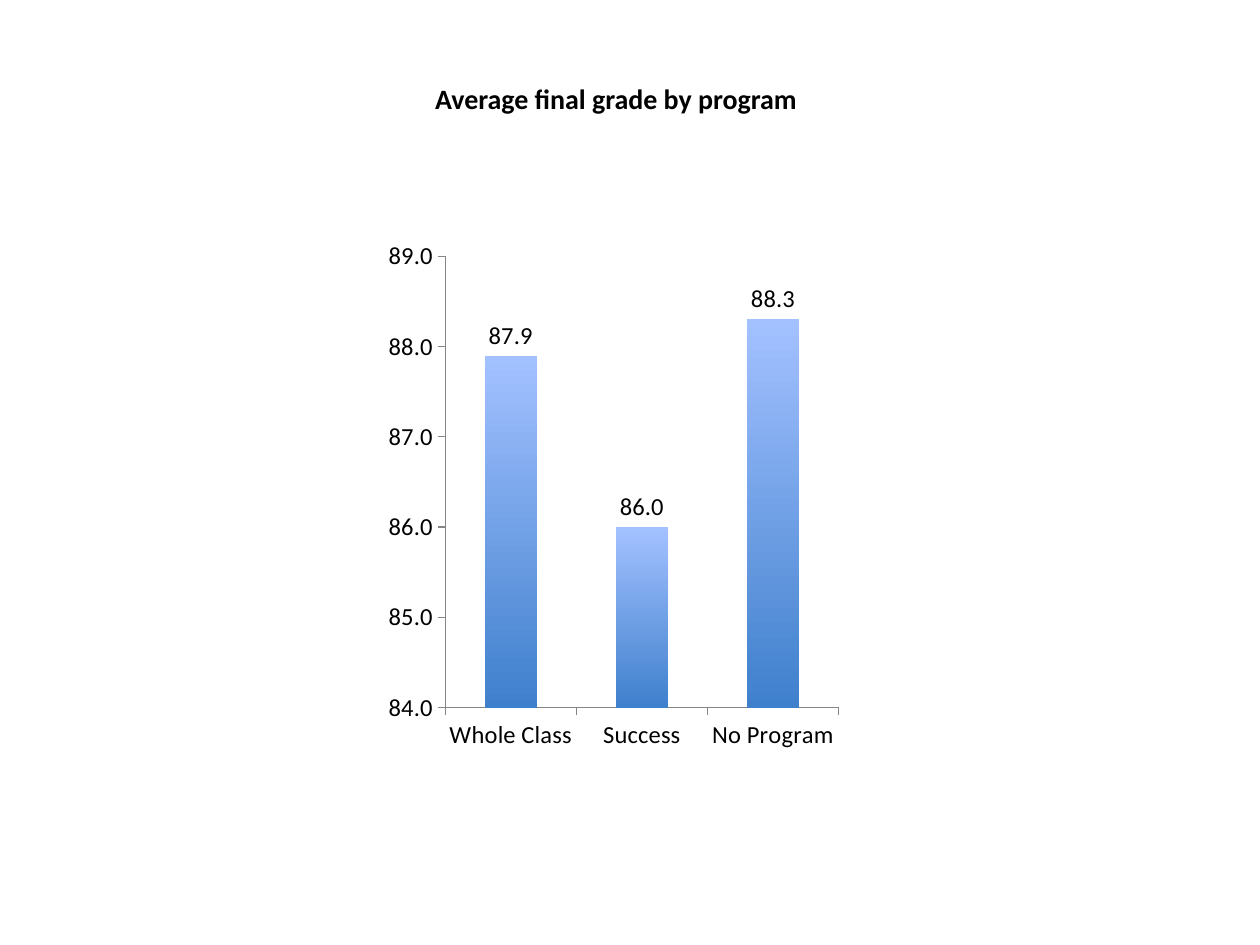
from pptx import Presentation
from pptx.chart.data import CategoryChartData
from pptx.dml.color import RGBColor
from pptx.enum.chart import XL_CHART_TYPE, XL_LABEL_POSITION, XL_TICK_MARK
from pptx.enum.text import MSO_ANCHOR, PP_ALIGN
from pptx.util import Inches, Pt

COLUMN = XL_CHART_TYPE.COLUMN_CLUSTERED
OUTSIDE_END = XL_LABEL_POSITION.OUTSIDE_END
TICK_OUT, TICK_NONE = XL_TICK_MARK.OUTSIDE, XL_TICK_MARK.NONE
TOP, CENTER = MSO_ANCHOR.TOP, PP_ALIGN.CENTER

# Content
TITLE = "Average final grade by program"
GRADES = {"Whole Class": 87.9, "Success": 86.0, "No Program": 88.3}
FONT = "Calibri"
NUMBER_FORMAT = "0.0"
COLORS = {"text": "000000", "axis": "868686",
          "bar_bottom": "3F80CD", "bar_top": "A3C1FF"}


def rgb(name):
    return RGBColor.from_string(COLORS[name])


def style_font(font, size, bold=False):
    font.name, font.size, font.bold = FONT, Pt(size), bold
    font.color.rgb = rgb("text")


prs = Presentation()
prs.slide_width, prs.slide_height = Inches(10), Inches(7.5)
s = prs.slides.add_slide(prs.slide_layouts[5])

# Grade chart
data = CategoryChartData(number_format=NUMBER_FORMAT)
data.categories = list(GRADES)
data.add_series("Series 1", list(GRADES.values()))
chart = s.shapes.add_chart(COLUMN, Inches(3.01), Inches(1.83),
                           Inches(3.72), Inches(4.21), data).chart
chart.has_legend = False
chart.has_title = False
style_font(chart.font, 14)

# Axes
for axis in (chart.category_axis, chart.value_axis):
    axis.has_major_gridlines = False
    axis.major_tick_mark = TICK_OUT
    axis.minor_tick_mark = TICK_NONE
    axis.format.line.color.rgb = rgb("axis")
    axis.format.line.width = Pt(0.75)
grades = chart.value_axis
grades.minimum_scale, grades.maximum_scale, grades.major_unit = 84, 89, 1
grades.tick_labels.number_format = NUMBER_FORMAT
grades.tick_labels.number_format_is_linked = False

# Bars and value labels
plot = chart.plots[0]
plot.gap_width = 150
plot.vary_by_categories = False
fill = plot.series[0].format.fill
fill.gradient()
fill.gradient_angle = 90
for stop, name in zip(fill.gradient_stops, ("bar_bottom", "bar_top")):
    stop.color.rgb = rgb(name)
plot.has_data_labels = True
labels = plot.data_labels
labels.show_value = True
labels.position = OUTSIDE_END
labels.number_format = NUMBER_FORMAT
labels.number_format_is_linked = False
style_font(labels.font, 14)

# Title
title = s.shapes.title
title.left, title.top = Inches(0.78), Inches(0.6)
title.width, title.height = Inches(8.22), Inches(0.37)
tf = title.text_frame
tf.text = TITLE
tf.word_wrap = True
tf.vertical_anchor = TOP
p = tf.paragraphs[0]
p.alignment = CENTER
style_font(p.font, 16, bold=True)

prs.save("out.pptx")
